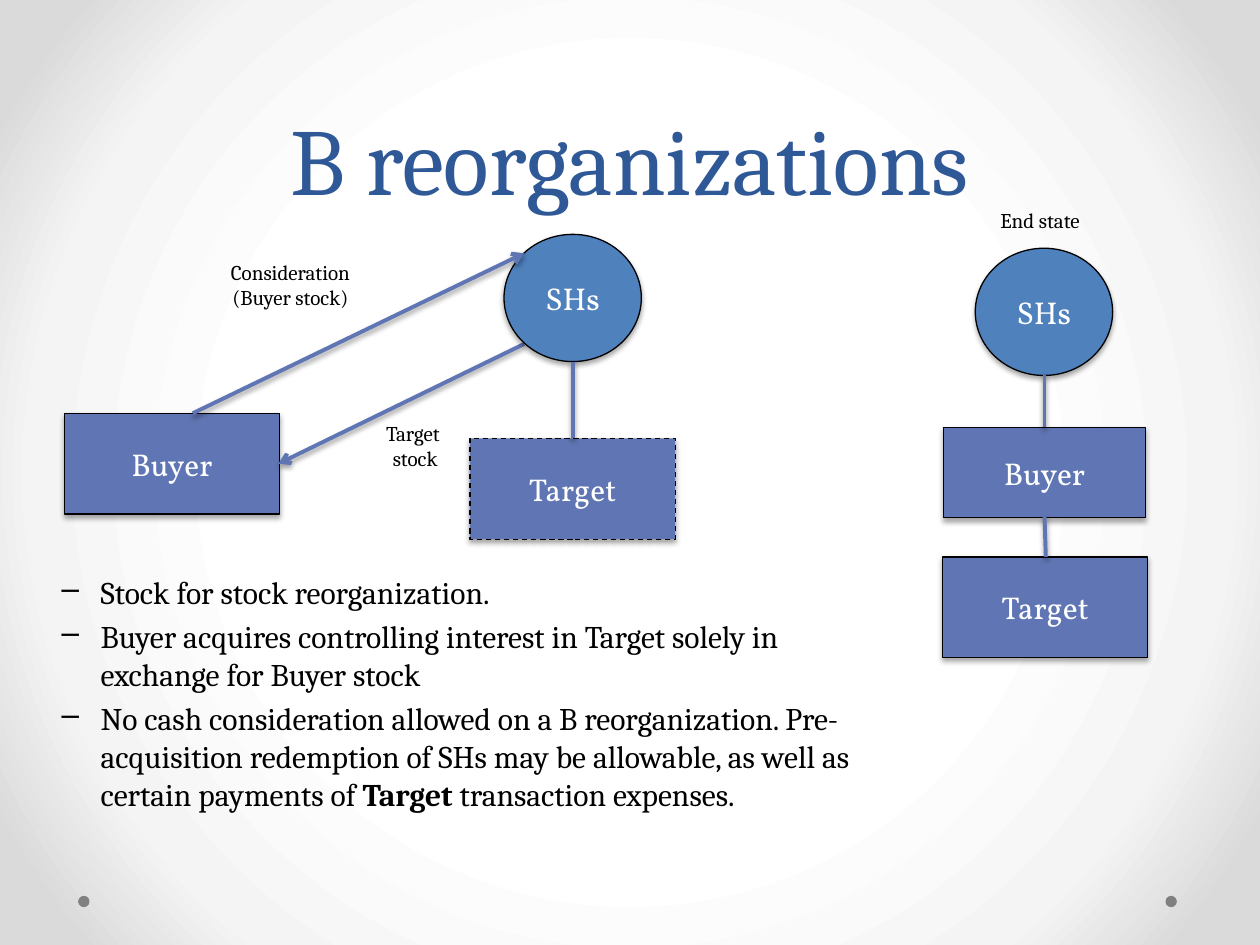
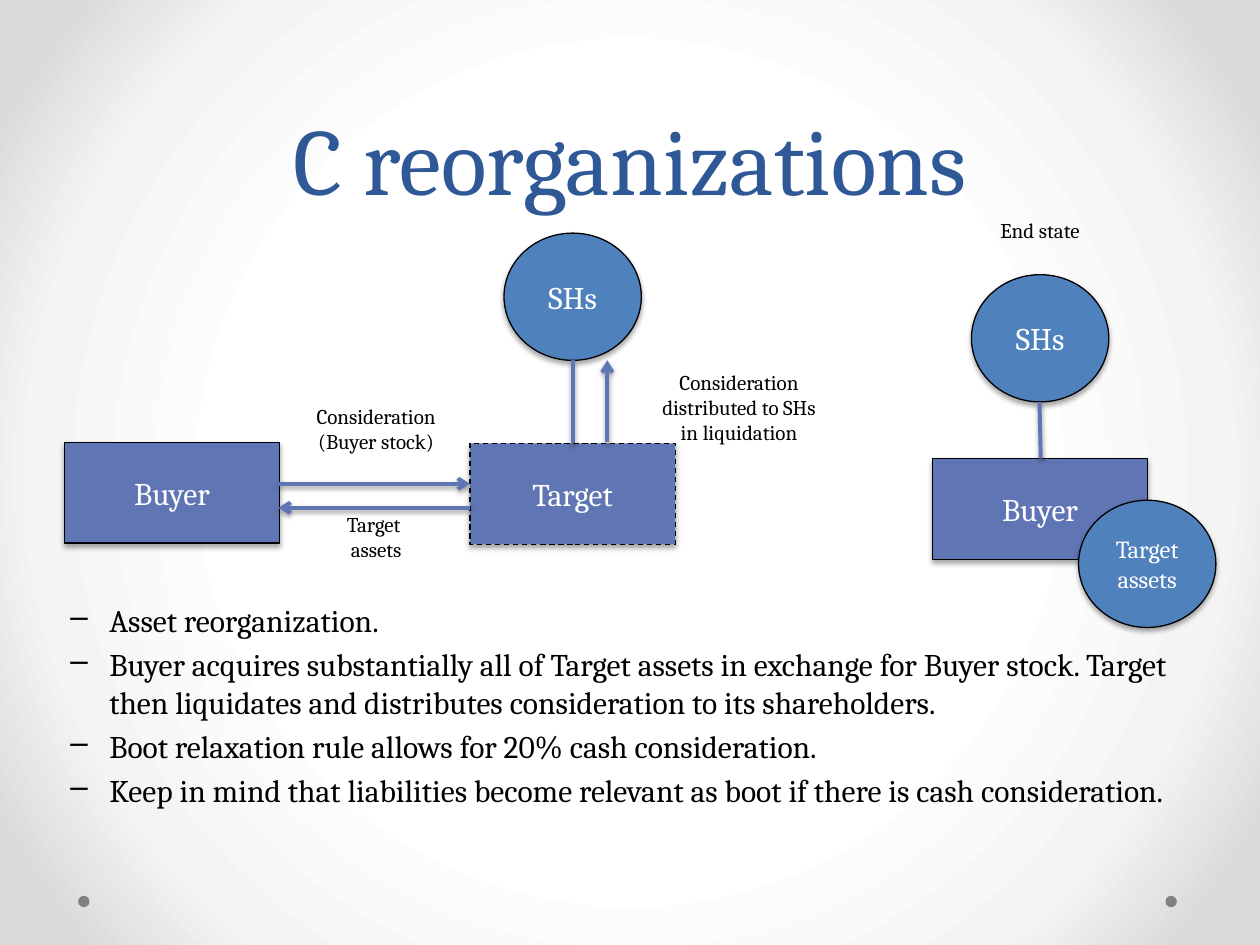
import pptx
import pptx.util
import pptx.dml.color
import pptx.enum.dml
import pptx.enum.shapes
import pptx.enum.text
import pptx.oxml
import pptx.oxml.ns

Inches, Pt = pptx.util.Inches, pptx.util.Pt
RGBColor = pptx.dml.color.RGBColor
MSO_SHAPE = pptx.enum.shapes.MSO_SHAPE
PP_ALIGN = pptx.enum.text.PP_ALIGN
MSO_ANCHOR = pptx.enum.text.MSO_ANCHOR
NS = pptx.oxml.ns.nsdecls("a", "p")

TITLE_BLUE = RGBColor(0x2F, 0x58, 0x97)
BOX_BLUE = RGBColor(0x60, 0x76, 0xB4)
CIRCLE_BLUE = RGBColor(0x4F, 0x81, 0xBD)
DOT_GRAY = RGBColor(0x80, 0x80, 0x80)
BLACK = RGBColor(0, 0, 0)
WHITE = RGBColor(0xFF, 0xFF, 0xFF)

STOPS = "".join(f'<a:gs pos="{pos}000"><a:srgbClr val="{color}"/></a:gs>'
                for pos, color in ((50, "FFFFFF"), (76, "F4F4F4"), (92, "DADADA")))
BACKGROUND = (f'<p:bg {NS}><p:bgPr><a:gradFill rotWithShape="1"><a:gsLst>{STOPS}</a:gsLst>'
              '<a:path path="circle"><a:fillToRect l="50000" t="50000" r="50000" b="50000"/></a:path>'
              '</a:gradFill><a:effectLst/></p:bgPr></p:bg>')

TITLE = {"size": Pt(54), "name": "Cambria"}
BODY = {"size": Pt(18), "name": "Cambria"}
NOTE = {"size": Pt(12), "name": "Cambria"}
CIRCLE = (1.09, 1.01)
BUYER = (1.71, 0.8)
TARGET = (1.63, 0.8)
SMALL_BUYER = (1.6, 0.72)
NOTE_WIDTH = 1.55

# Drawn from back to front:
#   ("box" or "circle", left, top, size, text, extra formats)
#   ("line" or "arrow", x1, y1, x2, y2)
#   ("note", left, top, number of lines, text)
SLIDES = [
    {
        "title": "B reorganizations",
        "font": "Vollkorn",
        "body": (-0.11, 4.5, 7.09, 2.77),
        "bullets": [
            "Stock for stock reorganization.",
            "Buyer acquires controlling interest in Target solely in exchange for Buyer stock",
            "No cash consideration allowed on a B reorganization. Pre-acquisition redemption of SHs "
            "may be allowable, as well as certain payments of *Target* transaction expenses.",
        ],
        "diagram": [
            ("box", 0.51, 3.28, BUYER, "Buyer", {}),
            ("box", 3.73, 3.48, TARGET, "Target", {"dashed": True}),
            ("arrow", 4.16, 2.73, 2.21, 3.68),
            ("circle", 4, 1.86, CIRCLE, "SHs", {}),
            ("arrow", 1.53, 3.28, 4.16, 2.01),
            ("note", 1.53, 2.01, 2, "Consideration (Buyer stock)"),
            ("line", 4.55, 2.87, 4.55, 3.48),
            ("note", 2.52, 3.29, 2, "Target \nstock"),
            ("box", 7.49, 3.39, SMALL_BUYER, "Buyer", {}),
            ("box", 7.48, 4.42, TARGET, "Target", {}),
            ("circle", 7.74, 1.97, CIRCLE, "SHs", {}),
            ("line", 8.29, 2.98, 8.29, 3.39),
            ("line", 8.29, 4.1, 8.3, 4.42),
            ("note", 7.48, 1.6, 1, "End state"),
        ],
    },
    {
        "title": "C reorganizations",
        "font": "Cambria",
        "body": (-0.04, 4.72, 9.54, 2.77),
        "bullets": [
            "Asset reorganization.",
            "Buyer acquires substantially all of Target assets in exchange for Buyer stock. "
            "Target then liquidates and distributes consideration to its shareholders.",
            "Boot relaxation rule allows for 20% cash consideration.",
            "Keep in mind that liabilities become relevant as boot if there is cash consideration.",
        ],
        "diagram": [
            ("box", 0.51, 3.51, BUYER, "Buyer", {}),
            ("box", 3.73, 3.52, TARGET, "Target", {"dashed": True}),
            ("arrow", 3.73, 4.03, 2.21, 4.03),
            ("circle", 4, 1.85, CIRCLE, "SHs", {}),
            ("arrow", 2.21, 3.84, 3.73, 3.84),
            ("note", 2.21, 3.15, 2, "Consideration (Buyer stock)"),
            ("line", 4.55, 2.86, 4.55, 3.52),
            ("note", 2.21, 4.01, 2, "Target \nassets"),
            ("box", 7.4, 3.64, BUYER, "Buyer", {}),
            ("circle", 7.71, 2.18, CIRCLE, "SHs", {}),
            ("line", 8.25, 3.19, 8.26, 3.64),
            ("note", 7.48, 1.68, 1, "End state"),
            ("arrow", 4.82, 3.51, 4.82, 2.86),
            ("note", 5.09, 2.88, 3, "Consideration distributed to SHs in liquidation"),
            ("circle", 8.56, 3.97, CIRCLE, "Target assets", {"size": 14}),
        ],
    },
]


def write(sp, lines, fmt, color, align=PP_ALIGN.CENTER, anchor=MSO_ANCHOR.TOP):
    """Fill sp with one paragraph per line; text between asterisks is bold."""
    tf = sp.text_frame
    tf.word_wrap = True
    tf.vertical_anchor = anchor
    for i, line in enumerate(lines):
        p = tf.paragraphs[0] if i == 0 else tf.add_paragraph()
        p.alignment = align
        for j, part in enumerate(line.split("*")):
            r = p.add_run()
            r.text = part
            r.font.color.rgb = color
            for name, value in {**fmt, "bold": j % 2 == 1}.items():
                setattr(r.font, name, value)
    return tf


def add_shadow(sp, alpha, distance):
    sp._element.spPr.append(pptx.oxml.parse_xml(
        f'<a:effectLst {NS}><a:outerShdw blurRad="{Pt(3.1)}" dist="{Pt(distance)}" dir="5400000" '
        f'rotWithShape="0"><a:srgbClr val="000000"><a:alpha val="{alpha}000"/></a:srgbClr>'
        '</a:outerShdw></a:effectLst>'))


prs = pptx.Presentation()
prs.slide_width, prs.slide_height = Inches(10), Inches(7.5)

for content in SLIDES:
    s = prs.slides.add_slide(prs.slide_layouts[6])
    s._element.cSld.insert(0, pptx.oxml.parse_xml(BACKGROUND))

    for left in (9.25, 0.62):
        dot = s.shapes.add_shape(MSO_SHAPE.OVAL, Inches(left), Inches(7.11), Inches(0.09), Inches(0.09))
        dot.shadow.inherit = False
        dot.fill.solid()
        dot.fill.fore_color.rgb = DOT_GRAY
        dot.line.fill.background()

    sp = s.shapes.add_textbox(Inches(0.5), 0, Inches(9), Inches(1.75))
    tf = write(sp, [content["title"]], TITLE, TITLE_BLUE, anchor=MSO_ANCHOR.BOTTOM)
    tf.paragraphs[0].line_spacing = Pt(58)

    sp = s.shapes.add_textbox(*map(Inches, content["body"]))
    tf = write(sp, content["bullets"], BODY, BLACK, PP_ALIGN.LEFT)
    for p in tf.paragraphs:
        p.space_before = Pt(3.6)
        pPr = p._p.get_or_add_pPr()
        pPr.set("marL", str(Inches(0.81)))
        pPr.set("indent", str(Inches(-0.31)))
        pPr.append(pptx.oxml.parse_xml(f'<a:buChar {NS} char="–"/>'))

    for kind, *item in content["diagram"]:
        if kind in ("line", "arrow"):
            sp = s.shapes.add_connector(pptx.enum.shapes.MSO_CONNECTOR.STRAIGHT, *map(Inches, item))
            sp.line.color.rgb = BOX_BLUE
            sp.line.width = Pt(2.25)
            if kind == "arrow":
                sp.line._get_or_add_ln().append(pptx.oxml.parse_xml(f'<a:tailEnd {NS} type="arrow"/>'))
            add_shadow(sp, 38, 1.6)
        elif kind == "note":
            left, top, rows, text = item
            sp = s.shapes.add_textbox(Inches(left), Inches(top), Inches(NOTE_WIDTH), Inches(0.1 + 0.2 * rows))
            write(sp, text.split("\n"), NOTE, BLACK)
        else:
            left, top, size, text, extra = item
            preset, fill = {"box": (MSO_SHAPE.RECTANGLE, BOX_BLUE), "circle": (MSO_SHAPE.OVAL, CIRCLE_BLUE)}[kind]
            sp = s.shapes.add_shape(preset, *map(Inches, (left, top, *size)))
            sp.fill.solid()
            sp.fill.fore_color.rgb = fill
            sp.line.color.rgb = BLACK
            sp.line.width = Pt(0.75)
            if extra.get("dashed"):
                sp.line.dash_style = pptx.enum.dml.MSO_LINE.DASH
            add_shadow(sp, 35, 1.8)
            fmt = {"size": Pt(extra.get("size", 18)), "name": content["font"]}
            write(sp, [text], fmt, WHITE, anchor=MSO_ANCHOR.MIDDLE)

prs.save("out.pptx")
